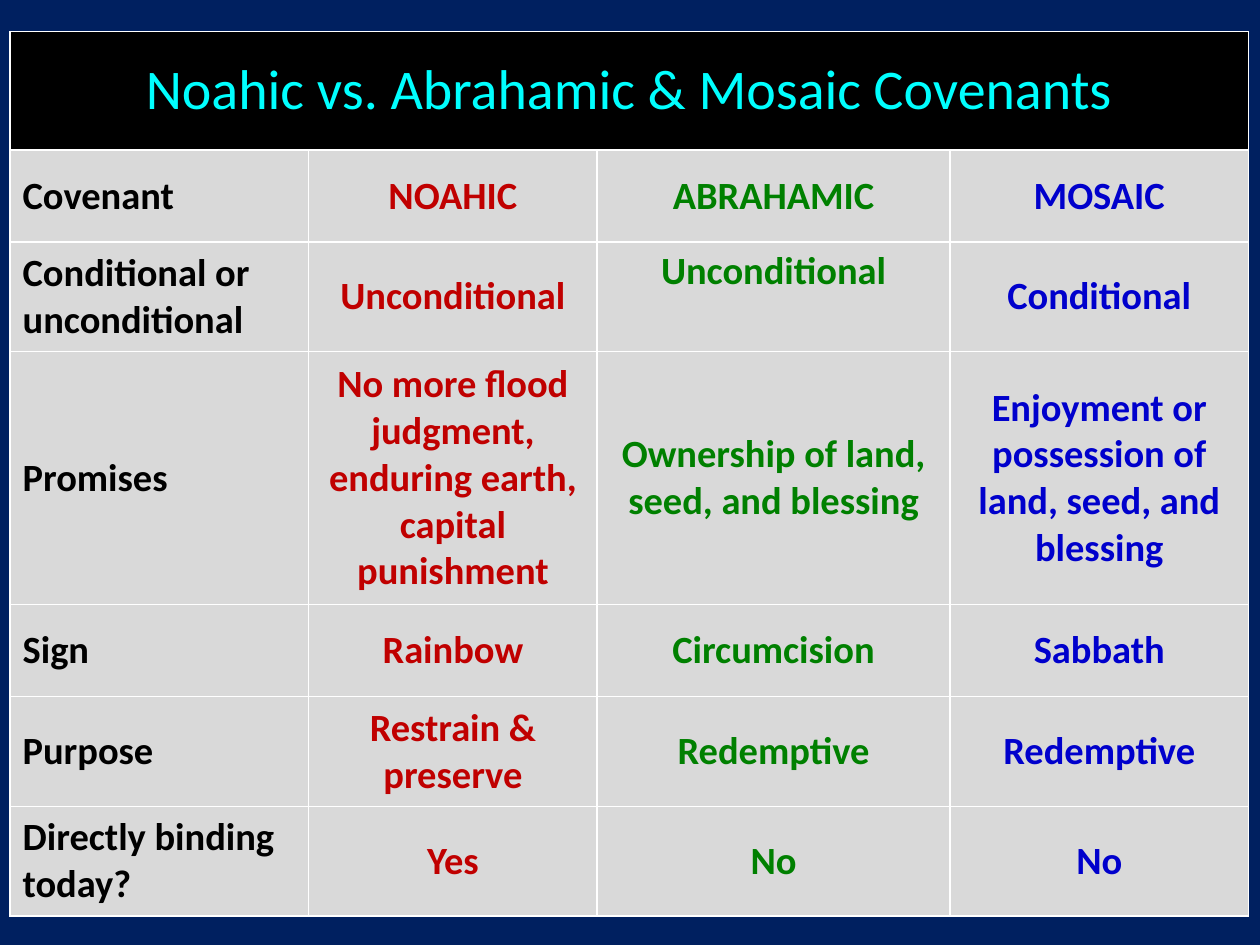
from dataclasses import dataclass

from lxml.etree import SubElement
from pptx import Presentation
from pptx.dml.color import RGBColor
from pptx.enum.text import MSO_ANCHOR, PP_ALIGN
from pptx.oxml.ns import qn
from pptx.table import _Cell
from pptx.util import Inches, Pt

COLORS = {
    "navy": "002060", "black": "000000", "cyan": "00FFFF", "gray": "D9D9D9",
    "red": "C00000", "green": "008000", "blue": "0000CC", "white": "FFFFFF",
}
TITLE = "Noahic vs. Abrahamic & Mosaic Covenants"
COL_WIDTHS = (2.37, 2.29, 2.8, 2.37)
TITLE_HEIGHT = 0.94


@dataclass(frozen=True)
class CellStyle:
    color: str
    fill: str = "gray"
    size: int = 22
    bold: bool = True
    align: PP_ALIGN = PP_ALIGN.CENTER


@dataclass(frozen=True)
class Row:
    height: float
    texts: tuple[str, str, str, str]


TITLE_STYLE = CellStyle("cyan", fill="black", size=32, bold=False)
COLUMN_STYLES = (
    CellStyle("black", align=PP_ALIGN.LEFT),
    CellStyle("red"),
    CellStyle("green"),
    CellStyle("blue"),
)
ROWS = (
    Row(0.73, ("Covenant", "NOAHIC", "ABRAHAMIC", "MOSAIC")),
    Row(0.87, ("Conditional or unconditional", "Unconditional",
               "Unconditional", "Conditional")),
    Row(2.01, ("Promises",
               "No more flood judgment, enduring earth, capital punishment",
               "Ownership of land, seed, and blessing",
               "Enjoyment or possession of land, seed, and blessing")),
    Row(0.73, ("Sign", "Rainbow", "Circumcision", "Sabbath")),
    Row(0.87, ("Purpose", "Restrain & preserve", "Redemptive", "Redemptive")),
    Row(0.87, ("Directly binding today?", "Yes", "No", "No")),
)


def rgb(name: str) -> RGBColor:
    return RGBColor.from_string(COLORS[name])


def format_cell(cell: _Cell, fill: str) -> None:
    cell.vertical_anchor = MSO_ANCHOR.MIDDLE
    tcPr = cell._tc.get_or_add_tcPr()
    for side in ("lnL", "lnR", "lnT", "lnB"):
        ln = SubElement(tcPr, qn(f"a:{side}"), w=str(Pt(1)))
        solid = SubElement(ln, qn("a:solidFill"))
        SubElement(solid, qn("a:srgbClr"), val=COLORS["white"])
    cell.fill.solid()
    cell.fill.fore_color.rgb = rgb(fill)
    tcPr.append(tcPr.find(qn("a:solidFill")))


def write_cell(cell: _Cell, text: str, style: CellStyle) -> None:
    p = cell.text_frame.paragraphs[0]
    p.alignment = style.align
    r = p.add_run()
    r.text = text
    r.font.name = "Calibri"
    r.font.size = Pt(style.size)
    r.font.bold = style.bold
    r.font.color.rgb = rgb(style.color)


def main() -> None:
    """Build the covenant comparison slide."""
    prs = Presentation()
    prs.slide_width, prs.slide_height = Inches(10), Inches(7.5)
    s = prs.slides.add_slide(prs.slide_layouts[6])
    s.background.fill.solid()
    s.background.fill.fore_color.rgb = rgb("navy")

    heights = (TITLE_HEIGHT, *(row.height for row in ROWS))
    table = s.shapes.add_table(
        len(heights), len(COL_WIDTHS), Inches(0.08), Inches(0.25),
        Inches(sum(COL_WIDTHS)), Inches(sum(heights)),
    ).table
    for column, width in zip(table.columns, COL_WIDTHS):
        column.width = Inches(width)
    for table_row, height in zip(table.rows, heights):
        table_row.height = Inches(height)

    for cell in table.rows[0].cells:
        format_cell(cell, TITLE_STYLE.fill)
    table.cell(0, 0).merge(table.cell(0, len(COL_WIDTHS) - 1))
    write_cell(table.cell(0, 0), TITLE, TITLE_STYLE)
    for i, row in enumerate(ROWS, start=1):
        for j, (text, style) in enumerate(zip(row.texts, COLUMN_STYLES)):
            format_cell(table.cell(i, j), style.fill)
            write_cell(table.cell(i, j), text, style)
    table.cell(2, 2).vertical_anchor = MSO_ANCHOR.TOP

    prs.save("out.pptx")


if __name__ == "__main__":
    main()
